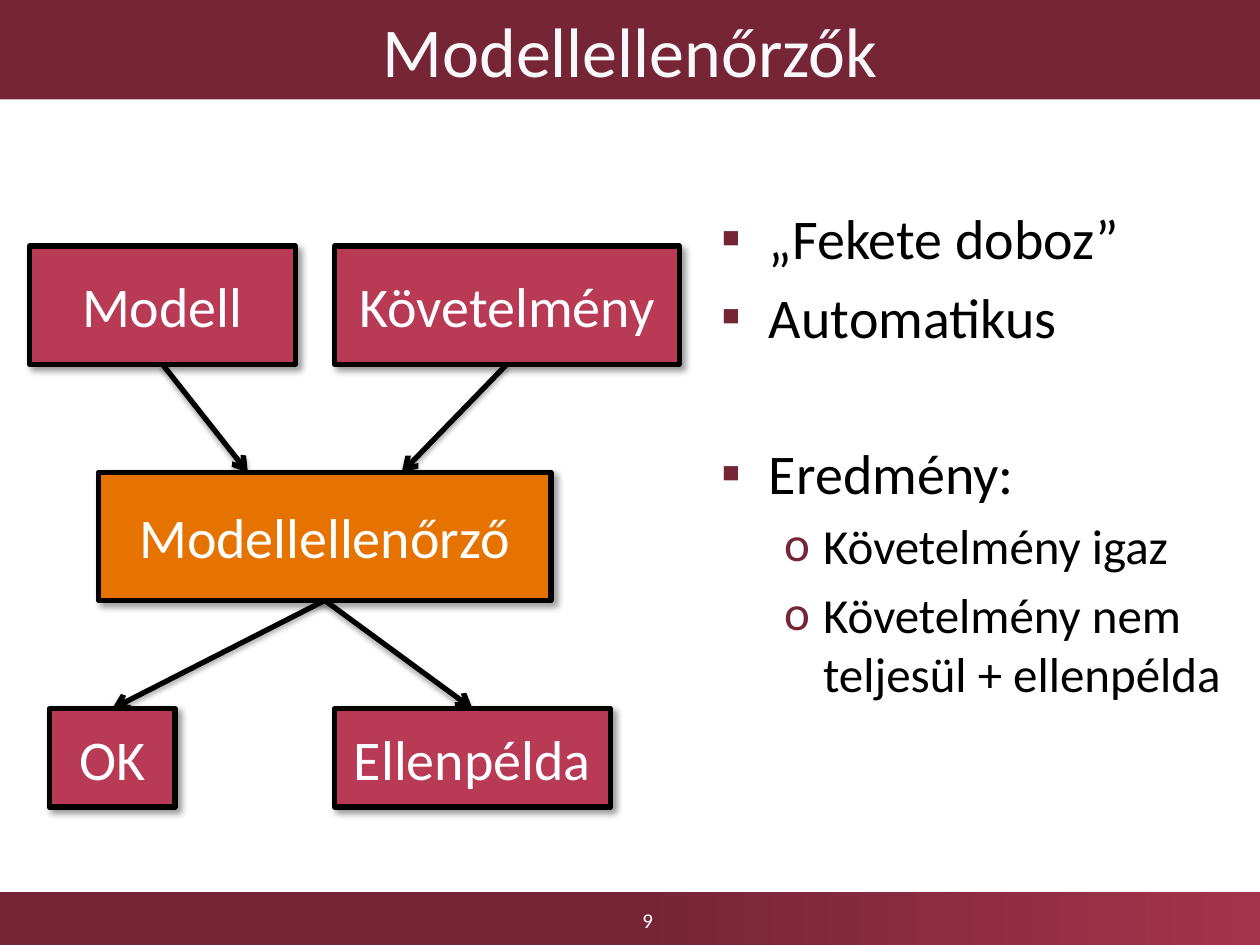
from lxml import etree
from pptx import Presentation
from pptx.dml.color import RGBColor
from pptx.enum import shapes, text
from pptx.oxml.ns import qn
from pptx.util import Inches, Pt

COLS, ROWS = 64, 48
UNIT = 10 / COLS  # square grid cell, in inches
FONT = "Calibri"
COLORS = {
    "wine": "762536", "wine_end": "A3334B", "node": "B83A55",
    "checker": "E67300", "black": "000000", "white": "FFFFFF", "title": "F8F8F8",
}


def rgb(name):
    return RGBColor.from_string(COLORS[name])


def grid(*values):
    return [Inches(v * UNIT) for v in values]


def add_sub(parent, tag, **attrs):
    return etree.SubElement(parent, qn(tag), attrs)


def style_font(p, size, color):
    p.font.name, p.font.size, p.font.color.rgb = FONT, Pt(size), rgb(color)


def center_text(sp, words, size, color):
    tf = sp.text_frame
    tf.word_wrap = True
    tf.vertical_anchor = text.MSO_ANCHOR.MIDDLE
    p = tf.paragraphs[0]
    p.text, p.alignment = words, text.PP_ALIGN.CENTER
    style_font(p, size, color)


def add_rect(s, box, fill=None):
    sp = s.shapes.add_shape(shapes.MSO_SHAPE.RECTANGLE, *grid(*box))
    sp.shadow.inherit = False
    sp.line.fill.background()
    if fill:
        sp.fill.solid()
        sp.fill.fore_color.rgb = rgb(fill)
    return sp


def outline(sp):
    sp.line.color.rgb = rgb("black")
    sp.line.width = Pt(3)


def add_shadow(effects, alpha, blur, dist, angle):
    shadow = add_sub(effects, "a:outerShdw", blurRad=str(Pt(blur)), dist=str(Pt(dist)),
                     dir=str(angle * 60000), algn="ctr", rotWithShape="0")
    color = add_sub(shadow, "a:srgbClr", val=COLORS["black"])
    add_sub(color, "a:alpha", val=str(alpha * 1000))


def add_arrow(s, start, end):
    c = s.shapes.add_connector(shapes.MSO_CONNECTOR.STRAIGHT, *grid(*start, *end))
    outline(c)
    props = c._element.spPr
    add_sub(props.find(qn("a:ln")), "a:tailEnd", type="arrow")
    add_shadow(add_sub(props, "a:effectLst"), 35, 3.1, 1.8, 90)


def title_bar(s, box, words):
    center_text(add_rect(s, box, "wine"), words, 40, "title")


def footer(s, box, number):
    x, y, w, h = box
    bar = add_rect(s, box)
    bar.fill.gradient()
    bar.fill.gradient_angle = 0
    for stop, (pos, color) in zip(bar.fill.gradient_stops, [(0.5, "wine"), (1, "wine_end")]):
        stop.position, stop.color.rgb = pos, rgb(color)
    # Page number
    tb = s.shapes.add_textbox(*grid(x + 22.5, y + 0.2, 20.8, h - 0.2))
    center_text(tb, number, 12, "white")


def diagram(s, box):
    x, y = box[:2]
    # Label, fill, then left, top, width and height inside the diagram
    nodes = {
        "model": ("Modell", "node", 0, 0, 13.5, 6),
        "requirement": ("Követelmény", "node", 15.5, 0, 17.5, 6),
        "checker": ("Modellellenőrző", "checker", 3.5, 11.5, 23, 6.5),
        "ok": ("OK", "node", 1, 23.5, 6.4, 5),
        "example": ("Ellenpélda", "node", 15.5, 23.5, 14, 5),
    }

    def anchor(name, share, bottom):
        left, top, w, h = nodes[name][2:]
        return x + left + w * share, y + top + h * bottom

    # Arrows run from a bottom edge to a top edge, behind the boxes
    for source, target, share in [("model", "checker", 0.33), ("requirement", "checker", 0.67),
                                  ("checker", "ok", 0.5), ("checker", "example", 0.5)]:
        add_arrow(s, anchor(source, 0.5, 1), anchor(target, share, 0))
    # Boxes
    for label, fill, left, top, w, h in nodes.values():
        sp = add_rect(s, (x + left, y + top, w, h), fill)
        outline(sp)
        add_shadow(sp._element.spPr.find(qn("a:effectLst")), 40, 4, 3, 45)
        center_text(sp, label, 32, "white")


def bullet_list(s, box, items):
    # Level: bullet, size, margin and hanging indent in inches
    levels = [("▪", 32, 0.38, 0.38), ("o", 28, 0.81, 0.31)]
    tf = s.shapes.add_textbox(*grid(*box)).text_frame
    tf.word_wrap = True
    tf.margin_top = Inches(0.68)
    for i, (level, words, before) in enumerate(items):
        p = tf.paragraphs[0] if i == 0 else tf.add_paragraph()
        bullet, size, margin, hang = levels[level]
        p.text, p.level = words, level
        p.space_before = Pt(before)
        props = p._p.get_or_add_pPr()
        props.set("marL", str(Inches(margin)))
        props.set("indent", str(-Inches(hang)))
        add_sub(add_sub(props, "a:buClr"), "a:srgbClr", val=COLORS["wine"])
        add_sub(props, "a:buFont", typeface=FONT)
        add_sub(props, "a:buChar", char=bullet)
        style_font(p, size, "black")


def main():
    prs = Presentation()
    prs.slide_width, prs.slide_height = grid(COLS, ROWS)
    s = prs.slides.add_slide(prs.slide_layouts[6])
    footer(s, (0, 45.3, COLS, 2.7), "9")
    title_bar(s, (0, 0, COLS, 5.05), "Modellellenőrzők")
    diagram(s, (1.5, 12.5, 33, 28.5))
    bullet_list(s, (36, 6, 27, 38.7), [
        (0, "„Fekete doboz”", 0),
        (0, "Automatikus", 6.4),
        (0, "Eredmény:", 51),
        (1, "Követelmény igaz", 5.6),
        (1, "Követelmény nem teljesül + ellenpélda", 5.6),
    ])
    prs.save("out.pptx")


if __name__ == "__main__":
    main()
